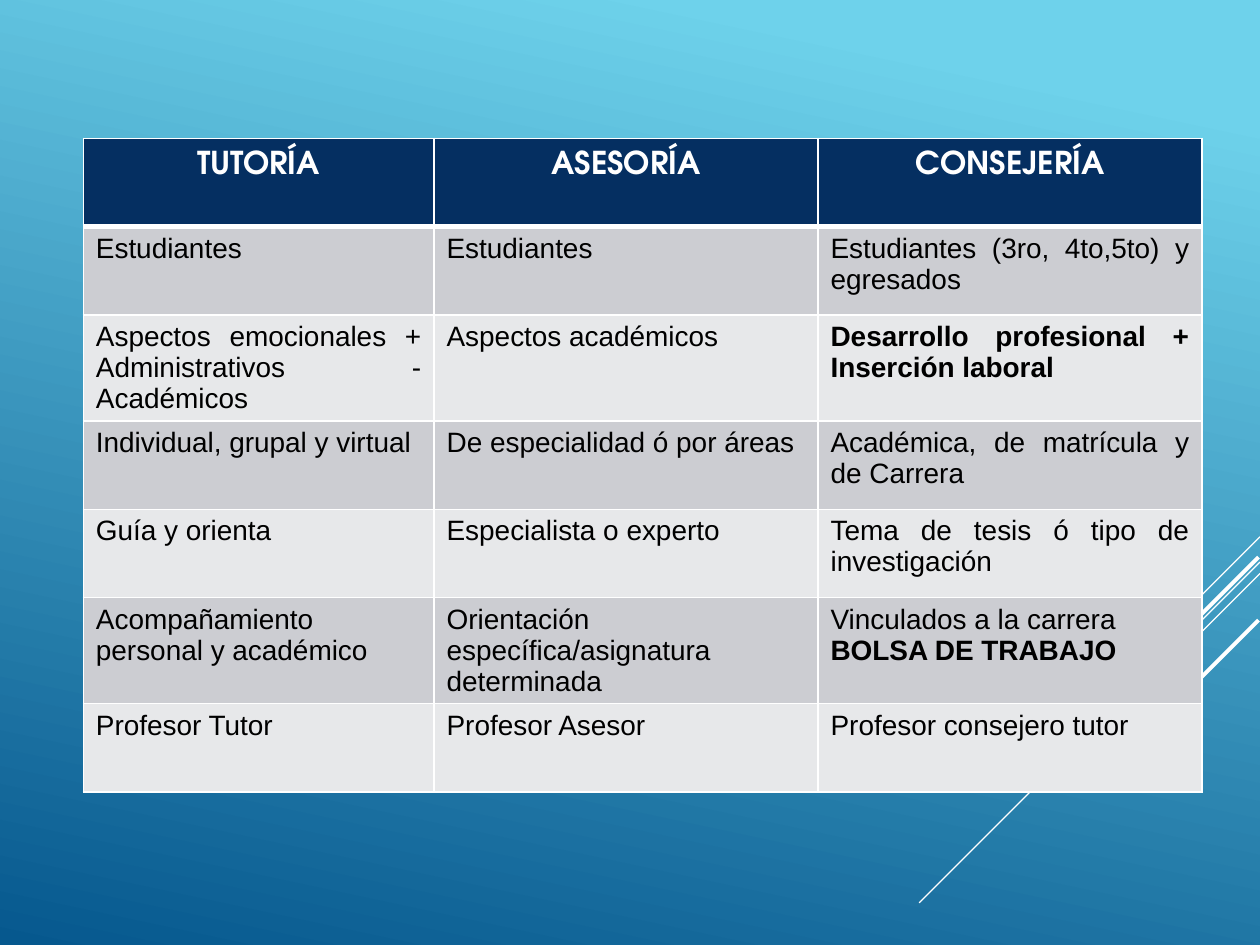
from pptx import Presentation
from pptx.dml.color import RGBColor as RGB
from pptx.enum.shapes import MSO_CONNECTOR as Conn
from pptx.enum.text import PP_ALIGN as Align
from pptx.oxml.ns import qn
from pptx.util import Cm, Pt
from lxml.etree import SubElement as Sub

COLORS = {
    "white": "FFFFFF", "black": "000000", "navy": "052F61",
    "odd": "CCCDD2", "even": "E7E8EA", "sky": "6ED2EB", "sea": "06588E",
}
HEADS = ["TUTORÍA", "ASESORÍA", "CONSEJERÍA"]
ROWS = [
    ["Estudiantes", "Estudiantes", "Estudiantes (3ro, 4to,5to) y egresados"],
    ["Aspectos emocionales + Administrativos - Académicos",
     "Aspectos académicos", "Desarrollo profesional + Inserción laboral"],
    ["Individual, grupal y virtual", "De especialidad ó por áreas",
     "Académica, de matrícula y de Carrera"],
    ["Guía y orienta", "Especialista o experto",
     "Tema de tesis ó tipo de investigación"],
    ["Acompañamiento personal y académico",
     "Orientación específica/asignatura determinada",
     "Vinculados a la carrera\nBOLSA DE TRABAJO"],
    ["Profesor Tutor", "Profesor Asesor", "Profesor consejero tutor"],
]
BOLD = {"Desarrollo profesional + Inserción laboral", "BOLSA DE TRABAJO"}
WIDTHS = [7.07, 7.74, 7.74]
ROW_H = 1.78
# Right end x, y, then the run down-left at 45 degrees, and the width
RAYS = [
    (25.4, 10.82, 2.11, 0.75), (25.4, 11.33, 6.87, 0.75),
    (25.4, 11.56, 4.37, 0.75), (25.37, 11.23, 3.99, 2.25),
    (25.37, 12.5, 2.9, 2.25),
]


def color(name):
    return RGB.from_string(COLORS[name])


def paint_back(slide):
    fill = slide.background.fill
    fill.gradient()
    fill.gradient_angle = 258
    for stop, name, pos in zip(fill.gradient_stops, ("sky", "sea"), (0.1, 1)):
        stop.color.rgb = color(name)
        stop.position = pos


def add_ray(slide, x, y, run, width):
    ray = slide.shapes.add_connector(
        Conn.STRAIGHT, Cm(x), Cm(y), Cm(x - run), Cm(y + run))
    ray.line.color.rgb = color("white")
    ray.line.width = Pt(width)
    Sub(ray._element.spPr, qn("a:effectLst"))


def set_edges(cell, base):
    """Draw white cell borders; base is the width of the lower one."""
    props = cell._tc.get_or_add_tcPr()
    edges = {"lnL": 1, "lnR": 1, "lnT": 1, "lnB": base}
    for spot, (tag, width) in enumerate(edges.items()):
        edge = Sub(props, qn(f"a:{tag}"), w=str(Pt(width)))
        fill = Sub(edge, qn("a:solidFill"))
        Sub(fill, qn("a:srgbClr"), val=COLORS["white"])
        props.insert(spot, edge)


def fill_cell(cell, text, back, head=False):
    cell.fill.solid()
    cell.fill.fore_color.rgb = color(back)
    set_edges(cell, 3 if head else 1)
    cell.text = text
    if head:
        cell.margin_top = Cm(0.25)  # room for the accents
    for para in cell.text_frame.paragraphs:
        para.alignment = Align.CENTER if head else Align.JUSTIFY
        font = para.font
        font.name = "TeX Gyre Adventor" if head else "Arial"
        font.size = Pt(18 if head else 16)
        font.bold = head or para.text in BOLD
        font.color.rgb = color("white" if head else "black")


def add_grid(slide):
    count = len(ROWS) + 1
    grid = slide.shapes.add_table(
        count, len(HEADS), Cm(1.68), Cm(2.79),
        Cm(sum(WIDTHS)), Cm(ROW_H * count)).table
    for col, width in zip(grid.columns, WIDTHS):
        col.width = Cm(width)
    for row in grid.rows:
        row.height = Cm(ROW_H)
    for r, texts in enumerate([HEADS] + ROWS):
        back = "odd" if r % 2 else "even"
        for c, text in enumerate(texts):
            fill_cell(grid.cell(r, c), text, back if r else "navy", r == 0)


def main():
    deck = Presentation()
    deck.slide_width, deck.slide_height = Cm(25.4), Cm(19.05)
    slide = deck.slides.add_slide(deck.slide_layouts[6])
    paint_back(slide)
    for ray in RAYS:
        add_ray(slide, *ray)
    add_grid(slide)
    deck.save("out.pptx")


if __name__ == "__main__":
    main()
